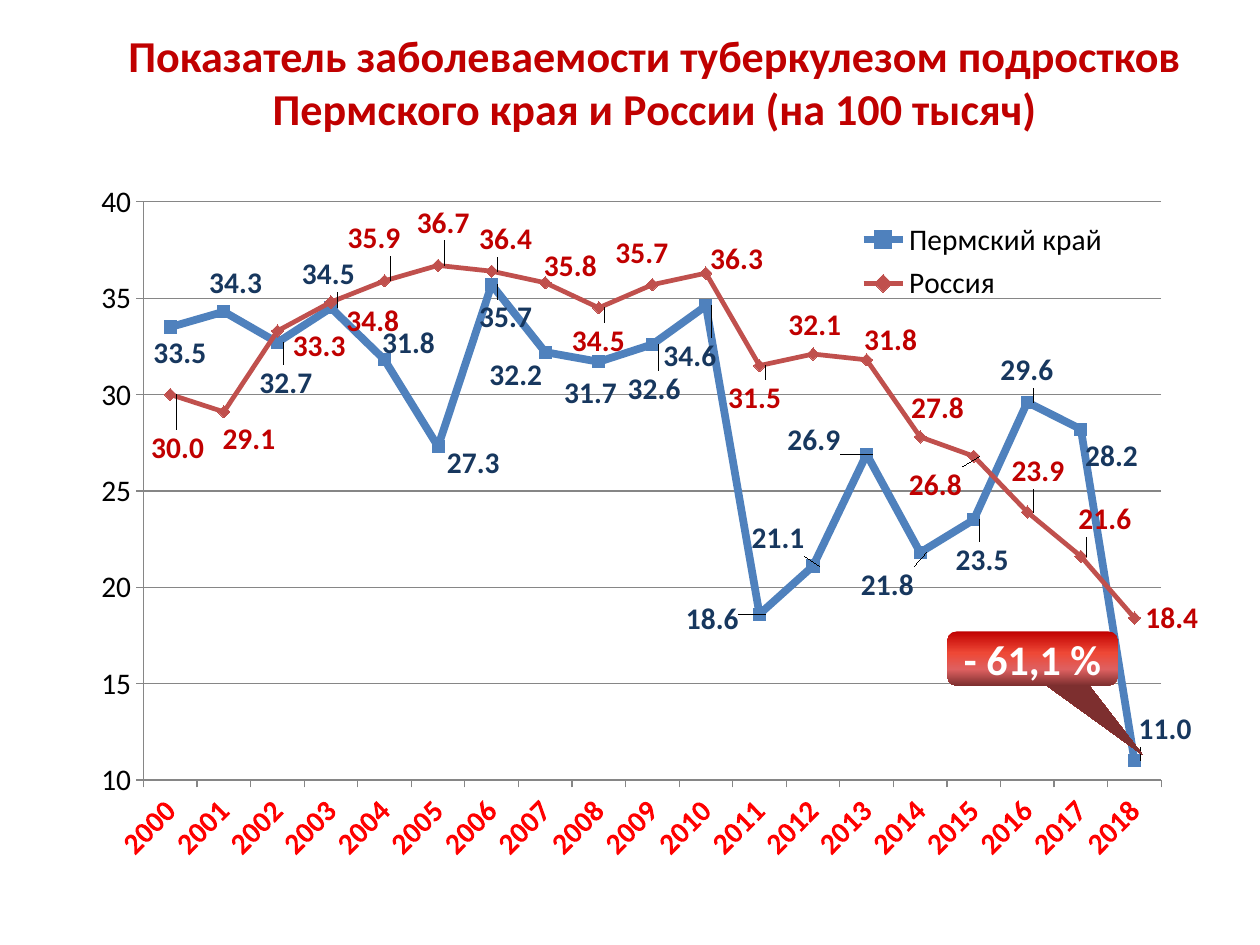
from lxml.etree import SubElement
from pptx import Presentation
from pptx.chart.data import CategoryChartData
from pptx.dml.color import RGBColor
from pptx.enum.chart import (XL_CHART_TYPE, XL_LABEL_POSITION, XL_LEGEND_POSITION,
                             XL_MARKER_STYLE, XL_TICK_MARK)
from pptx.enum.shapes import MSO_SHAPE
from pptx.enum.text import MSO_ANCHOR, PP_ALIGN
from pptx.oxml import parse_xml
from pptx.oxml.ns import nsdecls, qn
from pptx.util import Cm, Pt

FACE = "Calibri"
RED = RGBColor(0xC0, 0x00, 0x00)
BRIGHT = RGBColor(0xFF, 0x00, 0x00)
NAVY = RGBColor(0x17, 0x37, 0x5E)
BLUE = RGBColor(0x4F, 0x81, 0xBD)
BRICK = RGBColor(0xC0, 0x50, 0x4D)
GRAY = RGBColor(0x86, 0x86, 0x86)
BLACK = RGBColor(0x00, 0x00, 0x00)
WHITE = RGBColor(0xFF, 0xFF, 0xFF)
STOPS = [(0, RED), (40, RGBColor(0xEE, 0x48, 0x36)),
         (70, RGBColor(0xDE, 0x60, 0x60)), (100, RGBColor(0x7D, 0x2F, 0x2F))]
SIZE = 17.1
FORMAT = "#,##0.0"

# Label shifts (x, y) are in thousandths of the chart size
SERIES = [
    dict(name="Пермский край", color=BLUE, ink=NAVY, width=4.5,
         mark=XL_MARKER_STYLE.SQUARE, size=7,
         vals=[33.5, 34.3, 32.7, 34.5, 31.8, 27.3, 35.7, 32.2, 31.7, 32.6,
               34.6, 18.6, 21.1, 26.9, 21.8, 23.5, 29.6, 28.2, 11],
         shifts=[(-25, 36), (-23, -39), (-26, 56), (-36, -47), (-12, -23),
                 (-2, 22), (-21, 45), (-60, 32), (-41, 43), (-32, 61),
                 (-48, 69), (-76, 7), (-65, -39), (-81, -19), (-63, 44),
                 (-26, 55), (-34, -44), (-6, 37), (-6, -44)]),
    dict(name="Россия", color=BRICK, ink=RED, width=2.75,
         mark=XL_MARKER_STYLE.DIAMOND, size=7,
         vals=[30, 29.1, 33.3, 34.8, 35.9, 36.7, 36.4, 35.8, 34.5, 35.7,
               36.3, 31.5, 32.1, 31.8, 27.8, 26.8, 23.9, 21.6, 18.4],
         shifts=[(-27, 74), (-11, 37), (4, 21), (4, 26), (-43, -59),
                 (-29, -59), (-21, -44), (-11, -23), (-34, 45), (-43, -43),
                 (-6, -19), (-38, 44), (-32, -40), (-12, -28), (-18, -40),
                 (-68, 40), (-24, -56), (-12, -51)]),
]


def write(target, text=None, size=SIZE, color=BLACK, bold=False):
    """Format a font, or fill a text frame with centred text."""
    font = target
    if text is not None:
        para = target.paragraphs[0]
        para.alignment = PP_ALIGN.CENTER
        run = para.add_run()
        run.text = text
        font = run.font
    font.name, font.size, font.bold = FACE, Pt(size), bold
    font.color.rgb = color


def layout(**parts):
    """Make a manual chart layout from its named parts."""
    node = parse_xml(f"<c:layout {nsdecls('c')}><c:manualLayout/></c:layout>")
    for tag, val in parts.items():
        SubElement(node[0], qn(f"c:{tag}")).set("val", str(val))
    return node


deck = Presentation()
deck.slide_width, deck.slide_height = Cm(25.4), Cm(19.05)
slide = deck.slides.add_slide(deck.slide_layouts[5])

# Title
title = slide.shapes.title
title.left, title.top, title.width, title.height = Cm(1.9), Cm(0.53), Cm(22.6), Cm(2.21)
title.text_frame.vertical_anchor = MSO_ANCHOR.MIDDLE
write(title.text_frame, "Показатель заболеваемости туберкулезом подростков "
      "Пермского края и России (на 100 тысяч)", size=25.2, color=RED, bold=True)

# Chart
data = CategoryChartData()
data.categories = [str(year) for year in range(2000, 2019)]
for row in SERIES:
    data.add_series(row["name"], row["vals"])
chart = slide.shapes.add_chart(XL_CHART_TYPE.LINE_MARKERS, Cm(1.3), Cm(3.66),
                               Cm(22.86), Cm(14.66), data).chart
write(chart.font)
chart.has_title = False
plot = chart.plots[0]
plot.vary_by_categories = False
area = chart.element.find(".//" + qn("c:plotArea"))
for old in area.findall(qn("c:layout")):
    area.remove(old)
area.insert(0, layout(layoutTarget="inner", xMode="edge", yMode="edge",
                      x=0.071, y=0.028, w=0.914, h=0.795))

for line, row in zip(plot.series, SERIES):
    line.smooth = False
    line.format.line.color.rgb = row["color"]
    line.format.line.width = Pt(row["width"])
    line.marker.style, line.marker.size = row["mark"], row["size"]
    line.marker.format.fill.solid()
    line.marker.format.fill.fore_color.rgb = row["color"]
    line.marker.format.line.color.rgb = row["color"]
    labels = line.data_labels
    labels.show_value = True
    labels.number_format, labels.number_format_is_linked = FORMAT, False
    labels.position = XL_LABEL_POSITION.RIGHT
    write(labels.font, color=row["ink"], bold=True)
    for i, (x, y) in enumerate(row["shifts"]):
        label = line.points[i].data_label
        write(label.font, color=row["ink"], bold=True)
        label.position = XL_LABEL_POSITION.RIGHT
    for node, (x, y) in zip(labels._element.findall(qn("c:dLbl")), row["shifts"]):
        node.insert(1, layout(x=x / 1000, y=y / 1000))
        node.insert(2, parse_xml(f'<c:numFmt {nsdecls("c")} formatCode="{FORMAT}" '
                                 'sourceLinked="0"/>'))

# Axes
years, rates = chart.category_axis, chart.value_axis
for axis in (years, rates):
    axis.major_tick_mark = XL_TICK_MARK.OUTSIDE
    axis.minor_tick_mark = XL_TICK_MARK.NONE
    axis.format.line.color.rgb = GRAY
write(years.tick_labels.font, color=BRIGHT, bold=True)
years._element.find(qn("c:txPr")).find(qn("a:bodyPr")).set("rot", "-2700000")
write(rates.tick_labels.font)
rates.tick_labels.number_format = "General"
rates.tick_labels.number_format_is_linked = False
rates.minimum_scale, rates.maximum_scale, rates.major_unit = 10, 40, 5
rates.has_major_gridlines = True
rates.major_gridlines.format.line.color.rgb = GRAY

# Legend
chart.has_legend = True
legend = chart.legend
legend.position = XL_LEGEND_POSITION.RIGHT
legend.include_in_layout = False
write(legend.font)
for old in legend._element.findall(qn("c:layout")):
    legend._element.remove(old)
legend._element.find(qn("c:legendPos")).addnext(
    layout(xMode="edge", yMode="edge", x=0.71, y=0.045, w=0.23, h=0.13))

# Callout
note = slide.shapes.add_shape(MSO_SHAPE.ROUNDED_RECTANGULAR_CALLOUT,
                              Cm(19.1), Cm(12.73), Cm(3.43), Cm(1.09))
note.shadow.inherit = False
for i, val in enumerate((0.65, 1.79, 0.17)):
    note.adjustments[i] = val
note.line.fill.background()
note.fill.gradient()
grad = note._element.spPr.find(qn("a:gradFill"))
stops = "".join(f'<a:gs pos="{pos * 1000}"><a:srgbClr val="{color}"/></a:gs>'
                for pos, color in STOPS)
grad.getparent().replace(grad, parse_xml(
    f'<a:gradFill {nsdecls("a")} rotWithShape="1"><a:gsLst>{stops}</a:gsLst>'
    '<a:lin ang="5400000" scaled="0"/></a:gradFill>'))
frame = note.text_frame
frame.word_wrap = False
frame.vertical_anchor = MSO_ANCHOR.MIDDLE
write(frame, "- 61,1 %", size=24, color=WHITE, bold=True)

deck.save("out.pptx")
